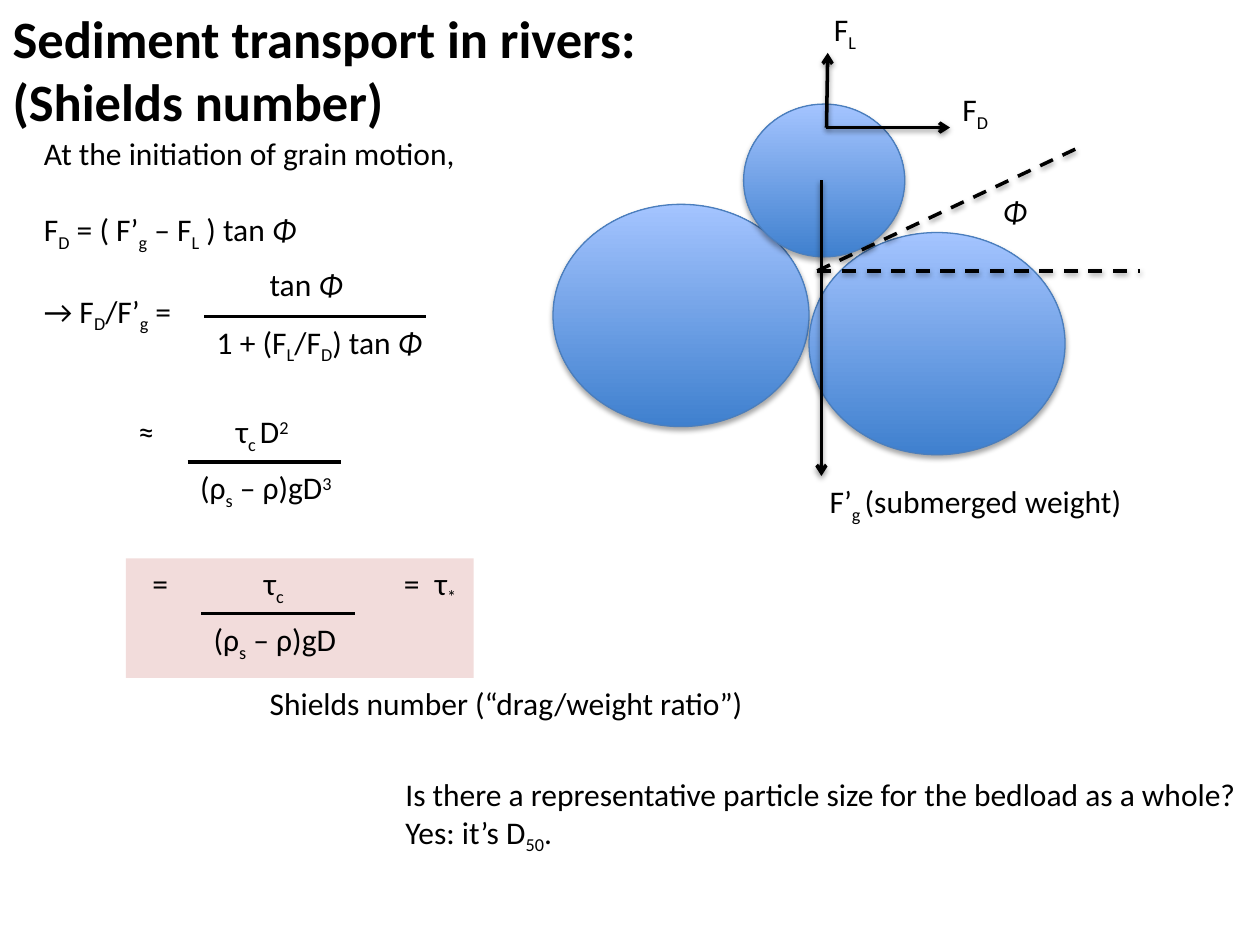
from lxml.etree import SubElement
from pptx import Presentation
from pptx.dml.color import RGBColor
from pptx.enum.dml import MSO_LINE
from pptx.enum.shapes import MSO_CONNECTOR, MSO_SHAPE
from pptx.enum.text import MSO_ANCHOR, MSO_AUTO_SIZE, PP_ALIGN
from pptx.oxml.ns import qn
from pptx.util import Pt

COLORS = {
    "text": "000000",
    "highlight": "F2DCDB",
    "grain_bottom": "3F80CE",
    "grain_top": "A4C4FF",
    "grain_edge": "4B7EBC",
}
FONT = "Calibri"
BASELINES = {"_": "-25000", "^": "30000"}  # subscript, superscript


def rgb(name):
    return RGBColor.from_string(COLORS[name])


def style_font(font, size, bold=False):
    font.name, font.size, font.bold = FONT, Pt(size), bold
    font.color.rgb = rgb("text")


def add_shadow(effects, distance, opacity):
    shadow = SubElement(effects, qn("a:outerShdw"), blurRad=str(Pt(3.1)),
                        dist=str(Pt(distance)), dir="5400000", rotWithShape="0")
    color = SubElement(shadow, qn("a:srgbClr"), val=COLORS["text"])
    SubElement(color, qn("a:alpha"), val=str(opacity * 1000))


def add_title(slide, text):
    title = slide.shapes.title
    title.left, title.top, title.width, title.height = Pt(0), Pt(0), Pt(375.8), Pt(80)
    frame = title.text_frame
    frame.text = text
    frame.word_wrap = False
    frame.auto_size = MSO_AUTO_SIZE.SHAPE_TO_FIT_TEXT
    frame.vertical_anchor = MSO_ANCHOR.TOP
    for paragraph in frame.paragraphs:
        paragraph.alignment = PP_ALIGN.LEFT
        for run in paragraph.runs:
            style_font(run.font, 30, bold=True)


def add_formula(slide, lines, left, top, width, height=29, gap=0, tabs=()):
    """Split each line at |; a part may start with _ (sub), ^ (super) or ~ (italic)."""
    box = slide.shapes.add_textbox(Pt(left), Pt(top), Pt(width), Pt(height))
    frame = box.text_frame
    frame.word_wrap = bool(tabs)
    frame.auto_size = MSO_AUTO_SIZE.SHAPE_TO_FIT_TEXT
    for number, line in enumerate(lines):
        paragraph = frame.add_paragraph() if number else frame.paragraphs[0]
        paragraph.space_before = Pt(gap if number else 0)
        if tabs:
            stops = SubElement(paragraph._p.get_or_add_pPr(), qn("a:tabLst"))
            for position in tabs:
                SubElement(stops, qn("a:tab"), pos=str(Pt(position)), algn="l")
        for part in line.split("|"):
            mark = part[0] if part[0] in "_^~" else ""
            run = paragraph.add_run()
            run.text = part[len(mark):]
            style_font(run.font, 18)
            if mark == "~":
                run.font.italic = True
            elif mark:
                run._r.get_or_add_rPr().set("baseline", BASELINES[mark])


def add_line(slide, start, end, arrow=False, dashed=False, shadow=True):
    line = slide.shapes.add_connector(
        MSO_CONNECTOR.STRAIGHT, *(Pt(value) for value in start + end))
    line.line.color.rgb = rgb("text")
    line.line.width = Pt(2)
    if dashed:
        line.line.dash_style = MSO_LINE.DASH
    if arrow:
        SubElement(line.line._get_or_add_ln(), qn("a:tailEnd"), type="arrow")
    effects = SubElement(line._element.spPr, qn("a:effectLst"))
    if shadow:
        add_shadow(effects, 1.6, 38)


def add_denominator(slide, formula, left, top, bar_width, text_width):
    """Fraction bar with the denominator hanging below it."""
    add_line(slide, (left, top), (left + bar_width, top), shadow=False)
    add_formula(slide, [formula], left, top, text_width, 51)


def add_grain(slide, left, top, width, height):
    grain = slide.shapes.add_shape(
        MSO_SHAPE.OVAL, Pt(left), Pt(top), Pt(width), Pt(height))
    grain.fill.gradient()
    grain.fill.gradient_angle = 90
    for stop, name in zip(grain.fill.gradient_stops, ("grain_bottom", "grain_top")):
        stop.color.rgb = rgb(name)
    grain.line.color.rgb = rgb("grain_edge")
    grain.line.width = Pt(0.75)
    grain.shadow.inherit = False
    add_shadow(grain._element.spPr.find(qn("a:effectLst")), 1.8, 35)


def add_highlight(slide, left, top, width, height):
    panel = slide.shapes.add_shape(
        MSO_SHAPE.RECTANGLE, Pt(left), Pt(top), Pt(width), Pt(height))
    panel.fill.solid()
    panel.fill.fore_color.rgb = rgb("highlight")
    panel.line.fill.background()
    panel.shadow.inherit = False


def draw_forces(slide):
    # Grains: two in the bed, one resting on them
    add_grain(slide, 316, 116.8, 146.3, 127)
    add_grain(slide, 462.3, 132.9, 146.3, 127)
    add_grain(slide, 424.9, 59.5, 92.1, 87.3)

    # Lift, drag and weight
    force_origin = (472.3, 72.9)
    add_line(slide, force_origin, (473, 30.2), arrow=True)
    add_line(slide, force_origin, (542.9, 72.9), arrow=True)
    add_line(slide, (469.4, 103), (469.4, 272), arrow=True)
    add_formula(slide, ["F|_D"], 542.9, 47.8, 30.2)
    add_formula(slide, ["F|_L"], 469.4, 2, 28.1)
    add_formula(slide, ["F’|_g |(submerged weight)"], 467, 272, 184.3)

    # Friction angle
    pivot = (467, 154.8)
    add_line(slide, pivot, (615, 85), dashed=True)
    add_line(slide, pivot, (651.5, 154.8), dashed=True)
    add_formula(slide, ["~Φ"], 566, 106, 33)


def write_derivation(slide):
    # Force balance
    add_formula(slide, ["At the initiation of grain motion,",
                        "F|_D| = ( F’|_g| – F|_L| ) tan |~Φ",
                        "→ F|_D|/F’|_g| ="], 18, 72.9, 252.7, 116.6, gap=22)
    add_formula(slide, ["tan |~Φ"], 147, 147.6, 60.5, 51)
    add_denominator(slide, "1 + (F|_L|/F|_D|) tan |~Φ", 116.8, 180.8, 126.7, 134.6)

    # Scaling of drag and weight
    add_formula(slide, ["≈\tτ|_c |D|^2"], 72, 232, 106, tabs=[55.7])
    add_denominator(slide, "(ρ|_s| – ρ)gD|^3", 107.2, 264, 87.8, 92.2)

    # Shields number
    add_formula(slide, ["=\tτ|_c|\t=\tτ|_*"], 80, 319, 190.8,
                tabs=[63.7, 143.7, 161.5])
    add_denominator(slide, "(ρ|_s| – ρ)gD", 115, 350.6, 87.8, 86.4)
    add_formula(slide, ["Shields number (“drag/weight ratio”)"], 147, 387.4, 288.7)


def main():
    presentation = Presentation()
    presentation.slide_width, presentation.slide_height = Pt(720), Pt(540)
    slide = presentation.slides.add_slide(presentation.slide_layouts[5])

    add_highlight(slide, 72, 319, 198.7, 68.4)
    add_title(slide, "Sediment transport in rivers:\n(Shields number)")
    draw_forces(slide)
    write_derivation(slide)

    # Closing question
    add_formula(slide, ["Is there a representative particle size for the bedload as a whole?",
                        "Yes: it’s D|_50|."], 224.6, 439.2, 496, 51)
    presentation.save("out.pptx")


if __name__ == "__main__":
    main()
